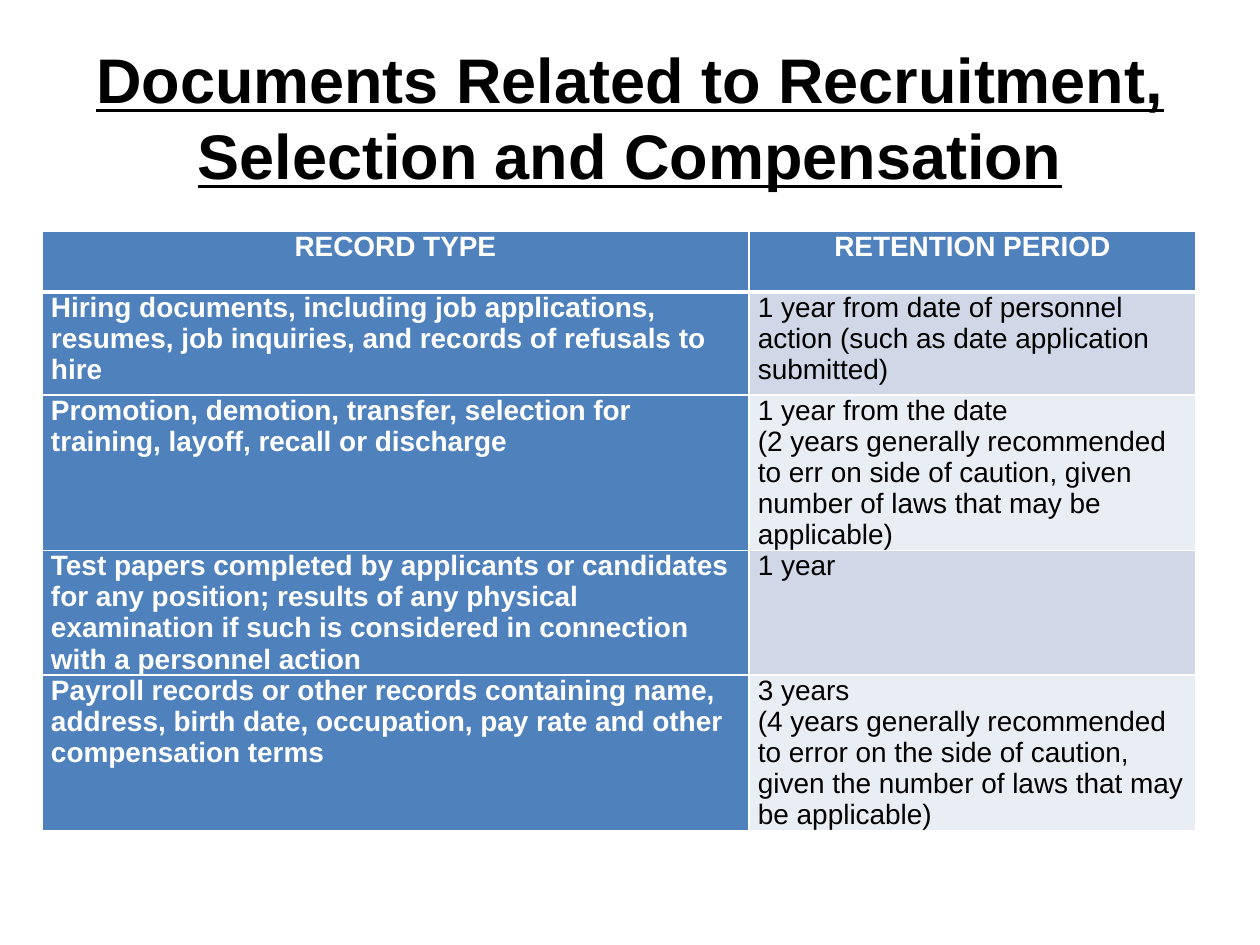
"""Build a slide with a table of record retention periods."""
from dataclasses import dataclass

from lxml.etree import SubElement
from pptx import Presentation
from pptx.dml.color import RGBColor
from pptx.enum.text import MSO_ANCHOR, PP_ALIGN
from pptx.oxml.ns import qn
from pptx.util import Emu, Pt

PX = 914400 // 126
FONT = "Arial"
COLORS = {
    "black": "000000",
    "white": "FFFFFF",
    "blue": "4F81BD",
    "band_dark": "D0D8E8",
    "band_light": "E9EDF4",
}
COLUMN_WIDTHS = [707, 447]
TABLE_LEFT, TABLE_TOP = 42, 231


@dataclass
class Record:
    record_type: str
    retention: str
    height: int


HEADER = Record("RECORD TYPE", "RETENTION PERIOD", 61)
RECORDS = [
    Record(
        "Hiring documents, including job applications, resumes, job inquiries, "
        "and records of refusals to hire",
        "1 year from date of personnel action (such as date application submitted)",
        103,
    ),
    Record(
        "Promotion, demotion, transfer, selection for training, layoff, recall or discharge",
        "1 year from the date\n(2 years generally recommended to err on side of caution, "
        "given number of laws that may be applicable)",
        155,
    ),
    Record(
        "Test papers completed by applicants or candidates for any position; results of any "
        "physical examination if such is considered in connection with a personnel action",
        "1 year",
        124,
    ),
    Record(
        "Payroll records or other records containing name, address, birth date, occupation, "
        "pay rate and other compensation terms",
        "3 years\n(4 years generally recommended to error on the side of caution, "
        "given the number of laws that may be applicable)",
        155,
    ),
]


def px(n: int) -> Emu:
    return Emu(n * PX)


def rgb(name: str) -> RGBColor:
    return RGBColor.from_string(COLORS[name])


def format_text(tf, size: int, color: str, bold: bool, align, underline: bool = False) -> None:
    for p in tf.paragraphs:
        p.alignment = align
        for r in p.runs:
            r.font.name = FONT
            r.font.size = Pt(size)
            r.font.bold = bold
            r.font.underline = underline
            r.font.color.rgb = rgb(color)


def set_borders(cell, top: int, bottom: int) -> None:
    tcPr = cell._tc.get_or_add_tcPr()
    for tag, width in (("lnL", 1), ("lnR", 1), ("lnT", top), ("lnB", bottom)):
        ln = SubElement(tcPr, qn(f"a:{tag}"), w=str(Pt(width)))
        fill = SubElement(ln, qn("a:solidFill"))
        SubElement(fill, qn("a:srgbClr"), val=COLORS["white"])


def fill_cell(cell, text: str, row: int, col: int) -> None:
    is_heading = row == 0 or col == 0
    band = "band_dark" if row % 2 else "band_light"
    cell.margin_left = cell.margin_right = px(9)
    cell.margin_top = cell.margin_bottom = 0
    set_borders(cell, top=3 if row == 1 else 1, bottom=3 if row == 0 else 1)
    cell.fill.solid()
    cell.fill.fore_color.rgb = rgb("blue" if is_heading else band)
    cell.text_frame.text = text
    format_text(
        cell.text_frame, 16, "white" if is_heading else "black", is_heading,
        PP_ALIGN.LEFT if row else PP_ALIGN.CENTER,
    )


def add_title(s, text: str) -> None:
    sp = s.shapes.title
    sp.left, sp.top, sp.width, sp.height = px(63), px(38), px(1134), px(157)
    tf = sp.text_frame
    tf.text = text
    tf.word_wrap = True
    tf.vertical_anchor = MSO_ANCHOR.MIDDLE
    format_text(tf, 36, "black", True, PP_ALIGN.CENTER, underline=True)


def add_records(s, records: list[Record]) -> None:
    height = sum(record.height for record in records)
    table = s.shapes.add_table(
        len(records), len(COLUMN_WIDTHS), px(TABLE_LEFT), px(TABLE_TOP),
        px(sum(COLUMN_WIDTHS)), px(height),
    ).table
    for column, width in zip(table.columns, COLUMN_WIDTHS):
        column.width = px(width)
    for i, record in enumerate(records):
        table.rows[i].height = px(record.height)
        for j, text in enumerate((record.record_type, record.retention)):
            fill_cell(table.cell(i, j), text, i, j)


def main() -> None:
    prs = Presentation()
    prs.slide_width, prs.slide_height = px(1260), px(945)
    s = prs.slides.add_slide(prs.slide_layouts[5])
    add_title(s, "Documents Related to Recruitment, Selection and Compensation")
    add_records(s, [HEADER, *RECORDS])
    prs.save("out.pptx")


if __name__ == "__main__":
    main()
